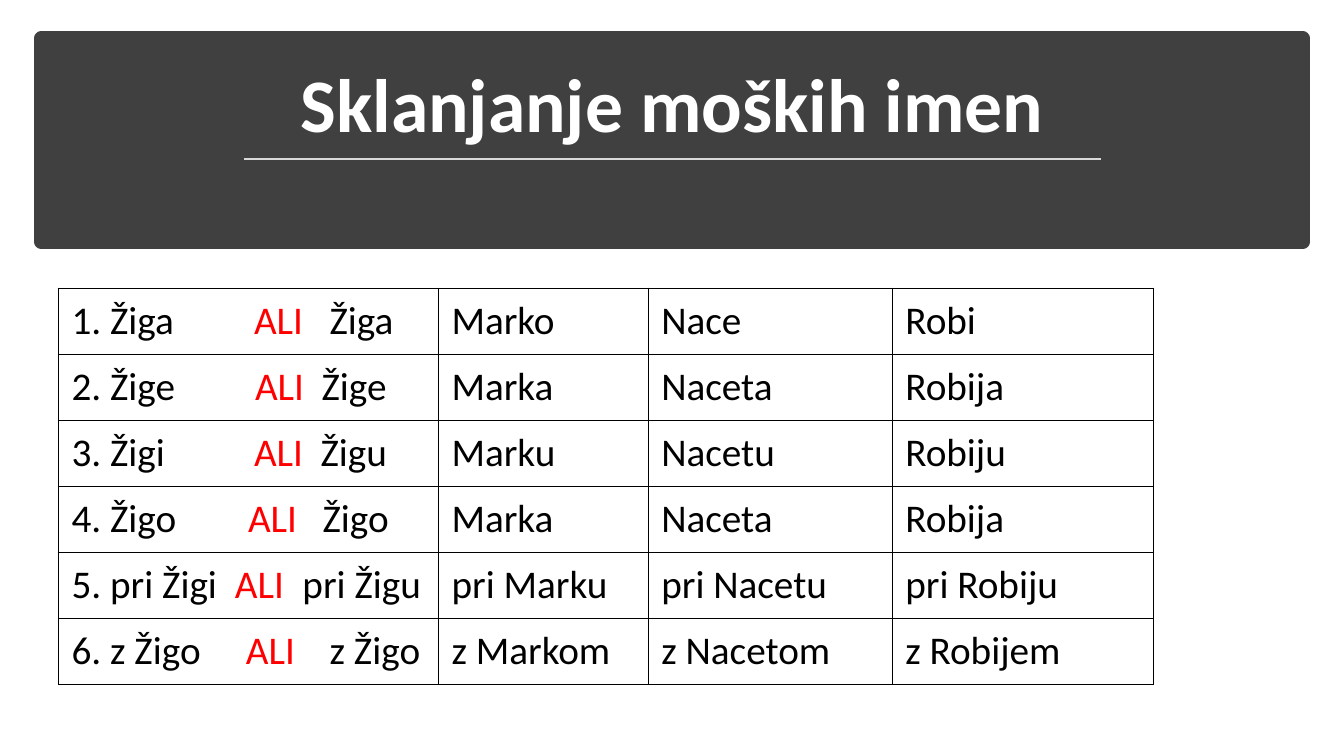
from dataclasses import dataclass

from lxml import etree
from pptx import Presentation
from pptx import util as u
from pptx.dml.color import RGBColor
from pptx.enum import shapes, text
from pptx.oxml import ns


@dataclass(frozen=True)
class Theme:
    font: str = "Calibri"
    banner: str = "404040"
    rule: str = "D9D9D9"
    light: str = "FFFFFF"
    ink: str = "000000"
    accent: str = "FF0000"
    title_size: int = 54
    table_size: int = 28


def child(parent, tag, **attributes):
    return etree.SubElement(parent, ns.qn(tag), attributes)


class SlideBuilder:
    def __init__(self, page, theme):
        self.page = page
        self.theme = theme

    def style(self, span, size, color, bold=False):
        span.font.name = self.theme.font
        span.font.size = u.Pt(size)
        span.font.bold = bold
        span.font.color.rgb = RGBColor.from_string(color)

    def banner(self, *bounds):
        color = RGBColor.from_string(self.theme.banner)
        banner = self.page.shapes.add_shape(
            shapes.MSO_SHAPE.RECTANGLE, *map(u.Inches, bounds))
        banner.shadow.inherit = False
        banner.fill.solid()
        banner.fill.fore_color.rgb = color
        banner.line.color.rgb = color
        banner.line.width = u.Pt(10)

    def title(self, wording, *bounds):
        box = self.page.shapes.add_textbox(*map(u.Inches, bounds))
        frame = box.text_frame
        frame.word_wrap = True
        frame.vertical_anchor = text.MSO_ANCHOR.BOTTOM
        frame.text = wording
        para = frame.paragraphs[0]
        para.alignment = text.PP_ALIGN.CENTER
        para.line_spacing = 0.9
        self.style(para.runs[0], self.theme.title_size, self.theme.light, True)

    def rule(self, *ends):
        rule = self.page.shapes.add_connector(
            shapes.MSO_CONNECTOR.STRAIGHT, *map(u.Inches, ends))
        rule.line.color.rgb = RGBColor.from_string(self.theme.rule)
        rule.line.width = u.Pt(1.75)
        child(rule._element.spPr, "a:effectLst")

    def borders(self, cell):
        properties = cell._tc.get_or_add_tcPr()
        for side in ("a:lnL", "a:lnR", "a:lnT", "a:lnB"):
            border = child(properties, side, w=str(u.Pt(1)))
            fill = child(border, "a:solidFill")
            child(fill, "a:srgbClr", val=self.theme.ink)

    def cell(self, cell, parts, stops):
        cell.margin_left = cell.margin_right = u.Inches(0.13)
        cell.margin_top = u.Inches(0.02)
        cell.margin_bottom = 0
        self.borders(cell)
        cell.fill.background()
        para = cell.text_frame.paragraphs[0]
        para.line_spacing = 1.15
        if stops:
            tabs = child(para._p.get_or_add_pPr(), "a:tabLst")
            for stop in stops:
                child(tabs, "a:tab", pos=str(u.Inches(stop)), algn="l")
        for index, part in enumerate(parts):
            span = para.add_run()
            span.text = part if index == 0 else "\t" + part
            color = self.theme.accent if part == "ALI" else self.theme.ink
            self.style(span, self.theme.table_size, color)

    def table(self, rows, left, top, widths, row_height):
        frame = self.page.shapes.add_table(
            len(rows), len(widths), u.Inches(left), u.Inches(top),
            u.Inches(sum(widths)), u.Inches(row_height * len(rows)))
        table = frame.table
        table.first_row = table.horz_banding = False
        for column, width in zip(table.columns, widths):
            column.width = u.Inches(width)
        for row, (first, second, stops, *names) in zip(table.rows, rows):
            row.height = u.Inches(row_height)
            self.cell(row.cells[0], (first, "ALI", second), stops)
            for index, name in enumerate(names, 1):
                self.cell(row.cells[index], (name,), ())


DECLENSIONS = [
    ("1. Žiga", "Žiga", (1.81, 2.56), "Marko", "Nace", "Robi"),
    ("2. Žige", "Žige", (1.82, 2.48), "Marka", "Naceta", "Robija"),
    ("3. Žigi", "Žigu", (1.81, 2.47), "Marku", "Nacetu", "Robiju"),
    ("4. Žigo", "Žigo", (1.75, 2.49), "Marka", "Naceta", "Robija"),
    ("5. pri Žigi", "pri Žigu", (1.62, 2.29),
     "pri Marku", "pri Nacetu", "pri Robiju"),
    ("6. z Žigo", "z Žigo", (1.73, 2.56),
     "z Markom", "z Nacetom", "z Robijem"),
]


def main():
    deck = Presentation()
    deck.slide_width = u.Inches(13.33)
    deck.slide_height = u.Inches(7.5)
    page = deck.slides.add_slide(deck.slide_layouts[6])
    builder = SlideBuilder(page, Theme())
    builder.banner(0.41, 0.38, 12.51, 2.02)
    builder.title("Sklanjanje moških imen", 0.58, 0.51, 12.18, 1.02)
    builder.rule(2.42, 1.58, 10.92, 1.58)
    builder.table(DECLENSIONS, 0.58, 2.86, (3.77, 2.08, 2.42, 2.59), 0.655)
    deck.save("out.pptx")


if __name__ == "__main__":
    main()
